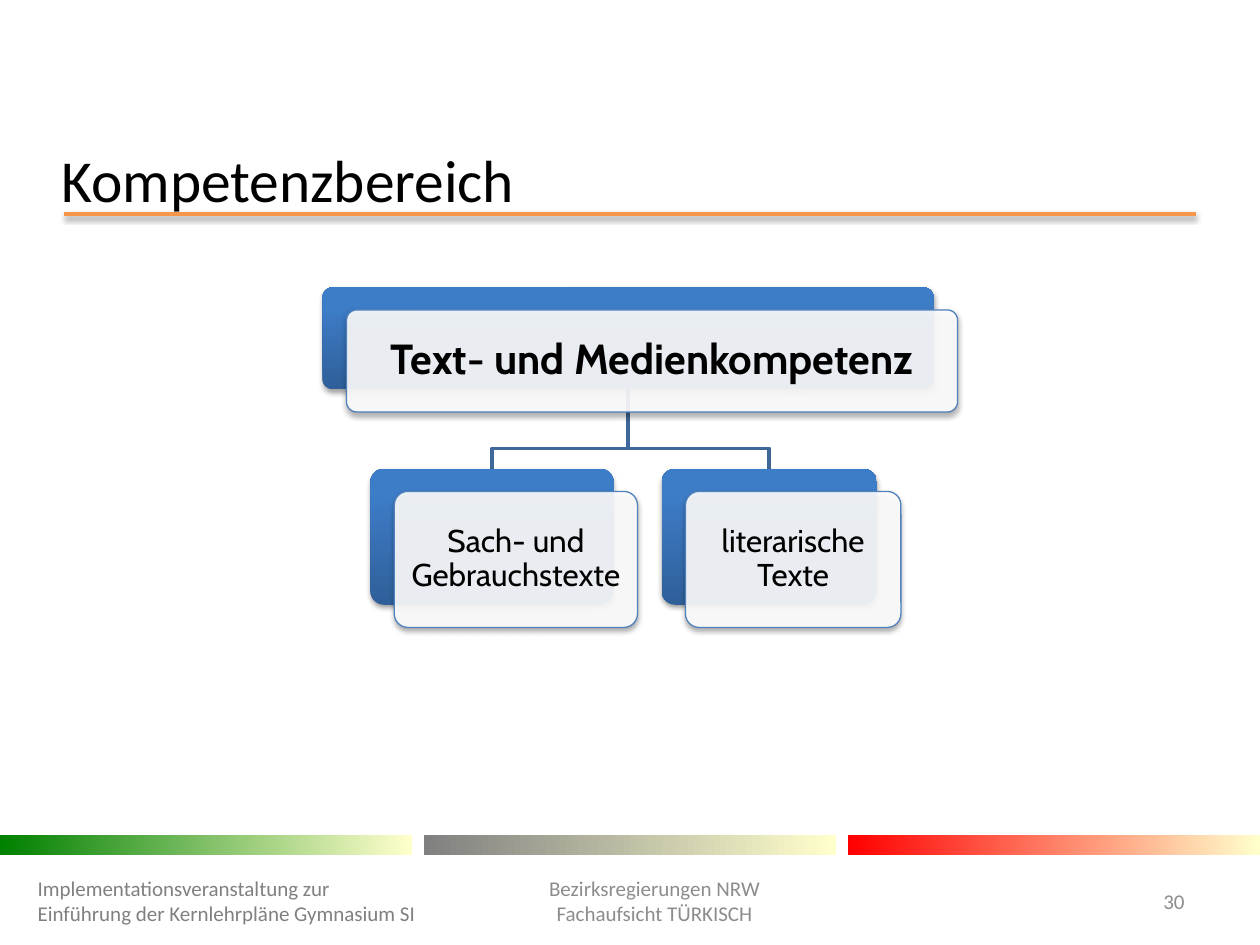
from dataclasses import dataclass

from lxml import etree
from pptx import Presentation
from pptx.dml.color import RGBColor
from pptx.enum.shapes import MSO_CONNECTOR, MSO_SHAPE
from pptx.enum.text import MSO_ANCHOR, PP_ALIGN
from pptx.oxml.ns import qn
from pptx.util import Inches, Pt

RECT, ROUND = MSO_SHAPE.RECTANGLE, MSO_SHAPE.ROUNDED_RECTANGLE
STRAIGHT = MSO_CONNECTOR.STRAIGHT
TOP, MIDDLE = MSO_ANCHOR.TOP, MSO_ANCHOR.MIDDLE
LEFT, CENTER, RIGHT = PP_ALIGN.LEFT, PP_ALIGN.CENTER, PP_ALIGN.RIGHT

COLORS = {
    "black": "000000", "white": "FFFFFF", "orange": "F79646",
    "green": "008000", "gray": "808080", "red": "FF0000", "cream": "FFFFCC",
    "deep": "2F5F99", "blue": "3D7CC7", "edge": "4F81BD", "wire": "3F6797",
    "pale": "8C8C8C",
}
SHIFT = (0.19, 0.18)  # offset of a card's front from its back


@dataclass
class Card:
    text: str
    left: float
    top: float
    width: float
    height: float
    size: int
    bold: bool
    inset: float

    @property
    def mid(self) -> float:
        return self.left + self.width / 2


@dataclass
class Label:
    lines: list[str]
    box: tuple[float, float, float, float]
    size: int
    color: str
    align: PP_ALIGN = LEFT
    anchor: MSO_ANCHOR = MIDDLE


ROOT = Card("Text- und Medienkompetenz", 2.56, 2.28, 4.85, 0.81, 24, True, 0.1)
LEAVES = [
    Card("Sach- und Gebrauchstexte", 2.94, 3.72, 1.93, 1.08, 18, False, 0.07),
    Card("literarische Texte", 5.25, 3.72, 1.71, 1.08, 18, False, 0.07),
]
LABELS = [
    Label(["Implementationsveranstaltung zur Einführung der Kernlehrpläne "
           "Gymnasium SI"], (0.2, 6.95, 3.24, 0.4), 12, "gray"),
    Label(["30"], (8.86, 6.95, 0.64, 0.4), 12, "pale", RIGHT),
    Label(["Kompetenzbereich"], (0.39, 1.09, 6.69, 0.67), 34, "black",
          anchor=TOP),
    Label(["Bezirksregierungen NRW", "Fachaufsicht TÜRKISCH"],
          (3.74, 6.79, 2.91, 0.71), 12, "pale", CENTER),
]


def rgb(name: str) -> RGBColor:
    return RGBColor.from_string(COLORS[name])


def assign(target, values: dict) -> None:
    for name, value in values.items():
        setattr(target, name, value)


def outline(shape, color: str, width: float) -> None:
    shape.line.color.rgb = rgb(color)
    shape.line.width = Pt(width)


def blend(shape, start: str, end: str, stop: float, angle: int) -> None:
    shape.fill.gradient()
    shape.fill.gradient_angle = angle
    pairs = zip(shape.fill.gradient_stops, (start, end), (0, stop))
    for mark, color, place in pairs:
        mark.color.rgb = rgb(color)
        mark.position = place


def shade(shape, alpha: int, gap: float) -> None:
    """Cast a soft black shadow straight down."""
    props = shape._element.spPr
    for old in props.findall(qn("a:effectLst")):
        props.remove(old)
    effects = etree.SubElement(props, qn("a:effectLst"))
    cast = etree.SubElement(
        effects, qn("a:outerShdw"), blurRad=str(Pt(3.1)), dist=str(Pt(gap)),
        dir="5400000", rotWithShape="0")
    color = etree.SubElement(cast, qn("a:srgbClr"), val=COLORS["black"])
    etree.SubElement(color, qn("a:alpha"), val=str(alpha * 1000))


def write(frame, lines: list[str], form: dict, para: dict, font: dict,
          color: str) -> None:
    assign(frame, {"word_wrap": True, **form})
    for i, line in enumerate(lines):
        item = frame.paragraphs[0] if i == 0 else frame.add_paragraph()
        assign(item, para)
        run = item.add_run()
        run.text = line
        assign(run.font, font)
        run.font.color.rgb = rgb(color)


def add_wire(slide, root: Card, leaf: Card) -> None:
    start, bend = root.top + root.height, leaf.top - 0.16
    pen = slide.shapes.build_freeform(Inches(root.mid), Inches(start))
    turns = [(root.mid, bend), (leaf.mid, bend), (leaf.mid, leaf.top)]
    pen.add_line_segments([(Inches(x), Inches(y)) for x, y in turns],
                          close=False)
    wire = pen.convert_to_shape()
    wire.shadow.inherit = False
    wire.fill.background()
    outline(wire, "wire", 2)


def add_card(slide, card: Card) -> None:
    size = Inches(card.width), Inches(card.height)
    back = slide.shapes.add_shape(
        ROUND, Inches(card.left), Inches(card.top), *size)
    front = slide.shapes.add_shape(
        ROUND, Inches(card.left + SHIFT[0]), Inches(card.top + SHIFT[1]), *size)
    back.adjustments[0] = front.adjustments[0] = 0.1

    blend(back, "deep", "blue", 0.8, 90)
    back.line.fill.background()
    shade(back, 38, 1.6)

    front.fill.solid()
    front.fill.fore_color.rgb = rgb("white")
    tint = front._element.spPr.find(qn("a:solidFill"))[0]
    etree.SubElement(tint, qn("a:alpha"), val="90000")
    outline(front, "edge", 0.75)
    shade(front, 35, 1.8)

    sides = ("left", "top", "right", "bottom")
    form = {f"margin_{side}": Inches(card.inset) for side in sides}
    write(front.text_frame, [card.text],
          {"vertical_anchor": MIDDLE, **form},
          {"alignment": CENTER, "line_spacing": 0.9},
          {"name": "Cabin", "size": Pt(card.size), "bold": card.bold}, "black")


def add_label(slide, label: Label) -> None:
    box = slide.shapes.add_textbox(*map(Inches, label.box))
    write(box.text_frame, label.lines, {"vertical_anchor": label.anchor},
          {"alignment": label.align},
          {"name": "Calibri", "size": Pt(label.size)}, label.color)


def main() -> None:
    deck = Presentation()
    deck.slide_width, deck.slide_height = Inches(10), Inches(7.5)
    slide = deck.slides.add_slide(deck.slide_layouts[6])

    # Rule under the title
    rule = slide.shapes.add_connector(
        STRAIGHT, Inches(0.51), Inches(1.7), Inches(9.49), Inches(1.7))
    outline(rule, "orange", 2)
    shade(rule, 38, 1.6)

    # Three fading bars above the footer
    width = 3.27
    step = (10 - width) / 2
    for i, color in enumerate(("green", "gray", "red")):
        bar = slide.shapes.add_shape(
            RECT, Inches(i * step), Inches(6.63), Inches(width), Inches(0.16))
        bar.shadow.inherit = False
        bar.line.fill.background()
        blend(bar, color, "cream", 1, 0)

    # Tree: wires behind, cards in front
    for leaf in LEAVES:
        add_wire(slide, ROOT, leaf)
    for card in (ROOT, *LEAVES):
        add_card(slide, card)

    # Title and footer
    for label in LABELS:
        add_label(slide, label)

    deck.save("out.pptx")


if __name__ == "__main__":
    main()
